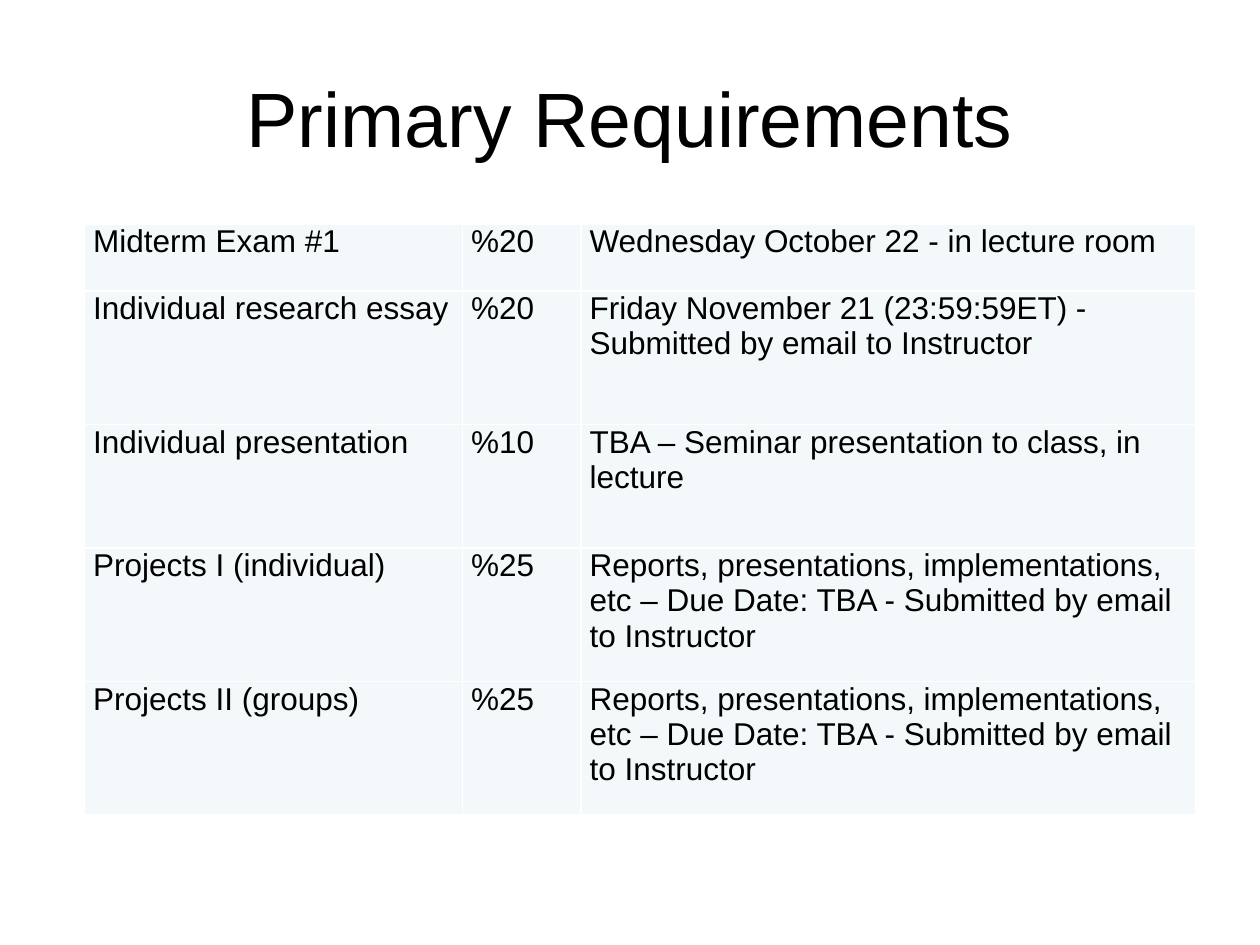
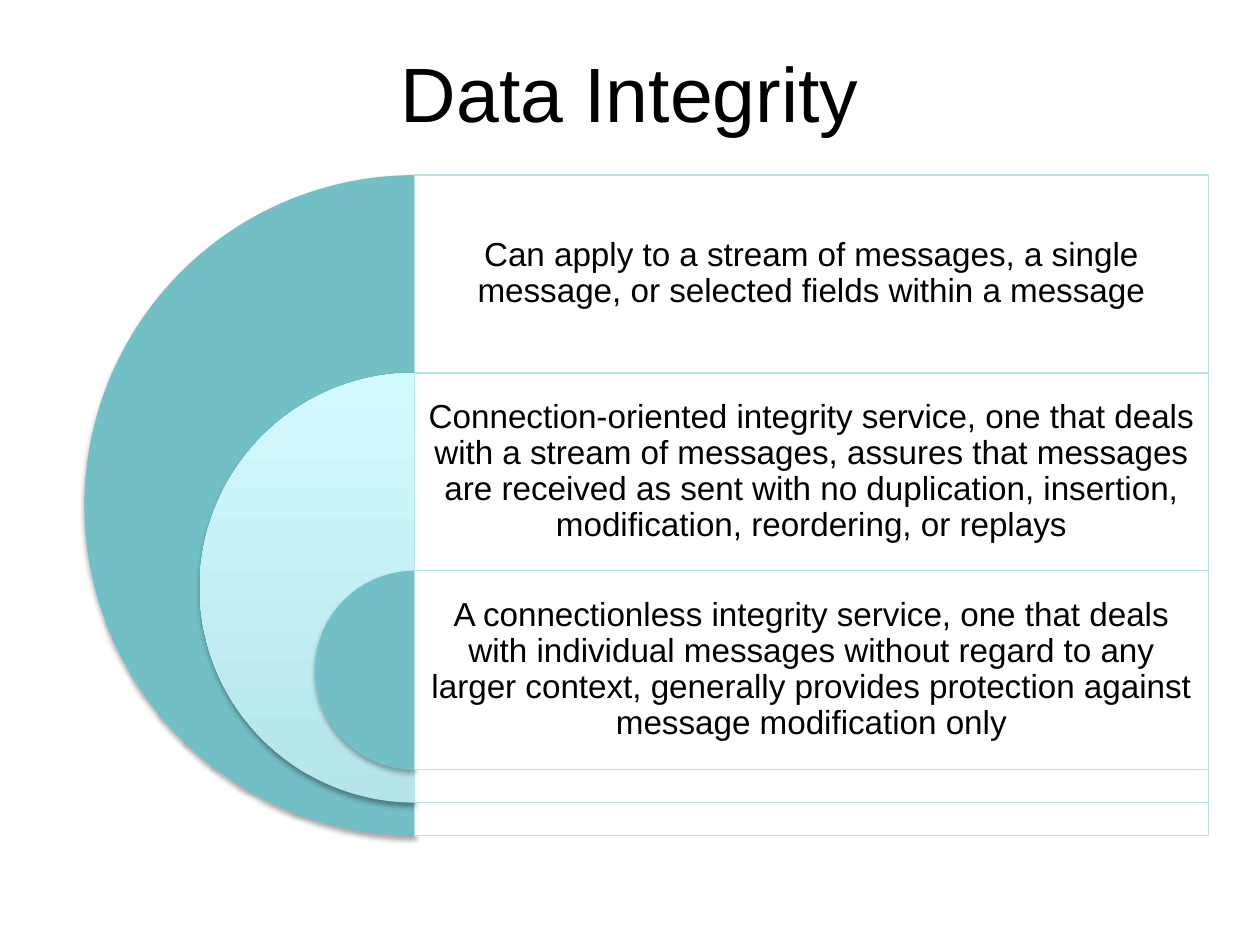
import pptx
import pptx.dml.color
import pptx.enum.shapes
import pptx.enum.text
import pptx.oxml
import pptx.oxml.ns
import pptx.util
from pptx.util import Inches

PALE, TEAL, EDGE = "F3F9FA", "72BFC5", "BBE0E3"
BLACK, WHITE = "000000", "FFFFFF"
FADE = ("B5E5E9", "D3FBFF")
SPACE = pptx.oxml.ns.nsdecls("a")
SHAPES = pptx.enum.shapes.MSO_SHAPE
MIDDLE = pptx.enum.text.MSO_ANCHOR.MIDDLE
CENTER = pptx.enum.text.PP_ALIGN.CENTER

REPORTS = ("Reports, presentations, implementations, etc – Due Date: TBA - "
           "Submitted by email to Instructor")
GRADES = [
    ("Midterm Exam #1", "%20", "Wednesday October 22 - in lecture room"),
    ("Individual research essay", "%20",
     "Friday November 21 (23:59:59ET) - Submitted by email to Instructor"),
    ("Individual presentation", "%10",
     "TBA – Seminar presentation to class, in lecture"),
    ("Projects I (individual)", "%25", REPORTS),
    ("Projects II (groups)", "%25", REPORTS),
]
POINTS = [
    "Can apply to a stream of messages, a single message, or selected fields "
    "within a message",
    "Connection-oriented integrity service, one that deals with a stream of "
    "messages, assures that messages are received as sent with no duplication, "
    "insertion, modification, reordering, or replays",
    "A connectionless integrity service, one that deals with individual messages "
    "without regard to any larger context, generally provides protection against "
    "message modification only",
]


def color(code):
    return pptx.dml.color.RGBColor.from_string(code)


def apply(target, values):
    for name, value in values.items():
        setattr(target, name, value)


def margins(side, top):
    return {"margin_left": Inches(side), "margin_right": Inches(side),
            "margin_top": Inches(top), "margin_bottom": Inches(top)}


class Deck:
    font = {"name": "Arial"}

    def __init__(self):
        self.show = pptx.Presentation()
        apply(self.show, {"slide_width": Inches(10), "slide_height": Inches(7.5)})

    def letter(self, frame, text, size, **style):
        frame.text = text
        line = frame.paragraphs[0]
        apply(line, style)
        apply(line.font, {**self.font, "size": pptx.util.Pt(size)})
        line.font.color.rgb = color(BLACK)

    def start(self, text, height):
        self.slide = self.show.slides.add_slide(self.show.slide_layouts[5])
        title = self.slide.shapes.title
        apply(title, {"left": Inches(0.5), "top": Inches(0.3),
                      "width": Inches(9), "height": Inches(height)})
        title.text_frame.vertical_anchor = MIDDLE
        self.letter(title.text_frame, text, 44, alignment=CENTER)

    def table(self, left, top, widths, heights, rows):
        frame = self.slide.shapes.add_table(
            len(rows), len(widths), Inches(left), Inches(top),
            Inches(sum(widths)), Inches(sum(heights)))
        grid = frame.table
        apply(grid, {"first_row": False, "horz_banding": False})
        for column, width in zip(grid.columns, widths):
            column.width = Inches(width)
        for row, height, texts in zip(grid.rows, heights, rows):
            row.height = Inches(height)
            for cell, text in zip(row.cells, texts):
                self.cell(cell, text)

    def cell(self, cell, text):
        apply(cell, margins(0.07, 0))
        self.letter(cell.text_frame, text, 18)
        for index, side in enumerate(("lnL", "lnR", "lnT", "lnB")):
            cell._tc.get_or_add_tcPr().insert(index, pptx.oxml.parse_xml(
                f'<a:{side} {SPACE} w="12700"><a:solidFill>'
                f'<a:srgbClr val="{WHITE}"/></a:solidFill></a:{side}>'))
        cell.fill.solid()
        cell.fill.fore_color.rgb = color(PALE)

    def shape(self, kind, left, top, width, height):
        shape = self.slide.shapes.add_shape(
            kind, Inches(left), Inches(top), Inches(width), Inches(height))
        shape.shadow.inherit = False
        return shape

    def half(self, middle, top, size, fill):
        pie = self.shape(SHAPES.PIE, middle - size / 2, top, size, size)
        pie.adjustments[0], pie.adjustments[1] = 54, 162
        pie.line.fill.background()
        if isinstance(fill, str):
            pie.fill.solid()
            pie.fill.fore_color.rgb = color(fill)
        else:
            pie.fill.gradient()
            pie.fill.gradient_angle = 90
            for stop, code in zip(pie.fill.gradient_stops, fill):
                stop.color.rgb = color(code)
        effects = pie._element.spPr.find(pptx.oxml.ns.qn("a:effectLst"))
        effects.append(pptx.oxml.parse_xml(
            f'<a:outerShdw {SPACE} blurRad="40000" dist="23000" dir="5400000" '
            f'rotWithShape="0"><a:srgbClr val="{BLACK}"><a:alpha val="35000"/>'
            f'</a:srgbClr></a:outerShdw>'))

    def panel(self, left, top, width, height):
        box = self.shape(SHAPES.RECTANGLE, left, top, width, height)
        box.fill.solid()
        box.fill.fore_color.rgb = color(WHITE)
        tint = box._element.spPr.find(".//" + pptx.oxml.ns.qn("a:srgbClr"))
        tint.append(pptx.oxml.parse_xml(f'<a:alpha {SPACE} val="90000"/>'))
        box.line.color.rgb = color(EDGE)
        box.line.width = pptx.util.Pt(0.75)

    def label(self, left, top, width, height, text):
        box = self.slide.shapes.add_textbox(
            Inches(left), Inches(top), Inches(width), Inches(height))
        apply(box.text_frame, {"word_wrap": True, "vertical_anchor": MIDDLE,
                               **margins(0.08, 0.08)})
        self.letter(box.text_frame, text, 19, alignment=CENTER, line_spacing=0.9)


def main():
    deck = Deck()
    deck.start("Primary Requirements", 1.25)
    deck.table(0.67, 1.78, (3, 0.94, 4.88), (0.53, 1.06, 0.98, 1.06, 1.06), GRADES)

    deck.start("Data Integrity", 0.85)
    middle, first, step, width = 3.29, 1.39, 1.57, 6.3
    for index, (text, fill) in enumerate(zip(POINTS, (TEAL, FADE, TEAL))):
        top = first + index * step
        size = 5.24 - index * 1.83
        deck.half(middle, top, size, fill)
        deck.panel(middle, top, width, size)
        deck.label(middle, top, width, step, text)

    deck.show.save("out.pptx")


if __name__ == "__main__":
    main()
